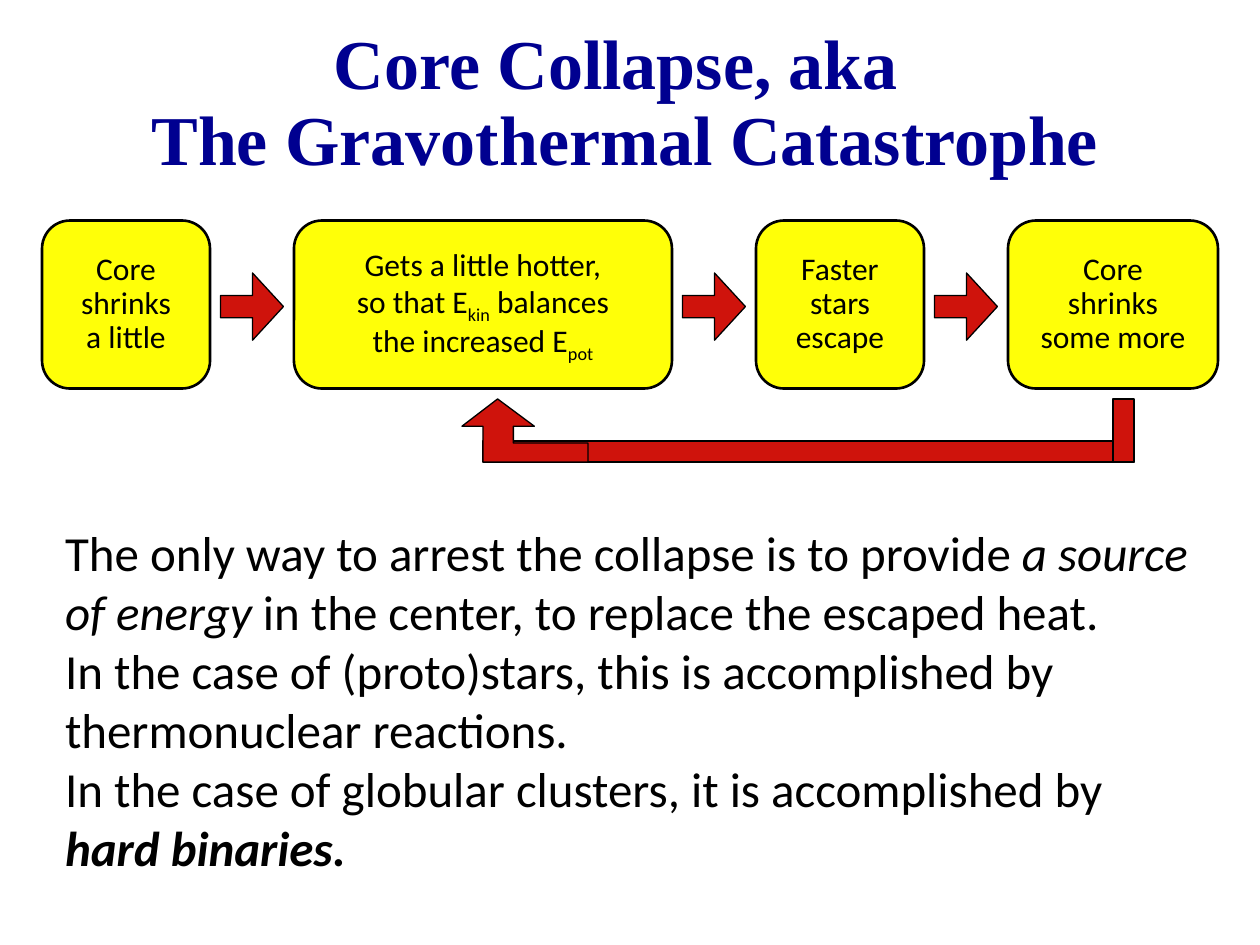
from dataclasses import dataclass
from lxml.etree import SubElement
from pptx import Presentation
from pptx.dml.color import RGBColor
from pptx.enum.shapes import MSO_SHAPE as Preset
from pptx.enum.text import MSO_ANCHOR as Anchor, MSO_AUTO_SIZE as AutoSize, PP_ALIGN as Align
from pptx.oxml.ns import qn
from pptx.slide import Slide
from pptx.util import Inches, Pt

UNITS_PER_INCH = 12
ITALIC = {"italic": True}
BOLD_ITALIC = {"bold": True, "italic": True}
SUBSCRIPT = {"baseline": "-25000"}


def color(value):
    return RGBColor.from_string(value)


def grid(*units):
    return [Inches(unit / UNITS_PER_INCH) for unit in units]


def set_values(target, values):
    for name, value in values.items():
        setattr(target, name, value)


@dataclass
class CollapseSlide:
    slide: Slide
    title_font: str = "Times New Roman"
    text_font: str = "Calibri"
    navy: str = "000090"
    black: str = "000000"
    yellow: str = "FFFF08"
    red: str = "CF130C"

    def place(self, shape, area):
        set_values(shape, dict(zip(("left", "top", "width", "height"), grid(*area))))

    def style_run(self, run, size, font, ink, extra):
        values = {"size": Pt(size), "name": font, **extra}
        baseline = values.pop("baseline", None)
        set_values(run.font, values)
        run.font.color.rgb = color(ink)
        if baseline:
            run._r.get_or_add_rPr().set("baseline", baseline)

    def fill_text(self, frame, lines, size, plain=False, **layout):
        for index, line in enumerate(lines):
            paragraph = frame.paragraphs[0] if index == 0 else frame.add_paragraph()
            if plain:
                properties = paragraph._p.get_or_add_pPr()
                properties.set("marL", "0")
                properties.set("indent", "0")
                SubElement(properties, qn("a:buNone"))
            set_values(paragraph, {"space_before": Pt(0), **layout})
            for part in [line] if isinstance(line, str) else line:
                text, extra = (part, {}) if isinstance(part, str) else part
                run = paragraph.add_run()
                run.text = text
                self.style_run(run, size, self.text_font, self.black, extra)

    def title(self, text, area):
        shape = self.slide.shapes.title
        self.place(shape, area)
        frame = shape.text_frame
        set_values(frame, {"auto_size": AutoSize.NONE, "vertical_anchor": Anchor.MIDDLE})
        paragraph = frame.paragraphs[0]
        paragraph.text = text
        set_values(paragraph, {"alignment": Align.CENTER, "line_spacing": 0.9})
        for run in paragraph.runs:
            self.style_run(run, 40, self.title_font, self.navy, {"bold": True})

    def body(self, lines, area):
        shape = self.slide.placeholders[1]
        self.place(shape, area)
        set_values(shape.text_frame, {"auto_size": AutoSize.NONE, "word_wrap": True,
                                      "vertical_anchor": Anchor.TOP})
        self.fill_text(shape.text_frame, lines, 28, plain=True,
                       alignment=Align.LEFT, line_spacing=1.0)

    def paint(self, shape, fill, width):
        shape.shadow.inherit = False
        shape.fill.solid()
        shape.fill.fore_color.rgb = color(fill)
        shape.line.color.rgb = color(self.black)
        shape.line.width = Pt(width)

    def stage(self, lines, area):
        shape = self.slide.shapes.add_shape(Preset.FLOWCHART_ALTERNATE_PROCESS, *grid(*area))
        self.paint(shape, self.yellow, 1.5)
        set_values(shape.text_frame, {"word_wrap": False, "vertical_anchor": Anchor.MIDDLE})
        self.fill_text(shape.text_frame, lines, 18, alignment=Align.CENTER, line_spacing=0.9)

    def arrow(self, area):
        shape = self.slide.shapes.add_shape(Preset.RIGHT_ARROW, *grid(*area))
        shape.adjustments[0] = 0.33
        shape.adjustments[1] = 0.49
        self.paint(shape, self.red, 0.75)

    def bar(self, area):
        self.paint(self.slide.shapes.add_shape(Preset.RECTANGLE, *grid(*area)), self.red, 0.75)

    def outline(self, points):
        start, *rest = [grid(*point) for point in points]
        builder = self.slide.shapes.build_freeform(*start)
        builder.add_line_segments(rest, close=True)
        self.paint(builder.convert_to_shape(), self.red, 0.75)


def main():
    presentation = Presentation()
    presentation.slide_width, presentation.slide_height = Inches(10), Inches(7.5)
    page = CollapseSlide(presentation.slides.add_slide(presentation.slide_layouts[1]))

    page.title("Core Collapse, aka \vThe Gravothermal Catastrophe", (2, 2, 115, 16))

    stages = [
        (4, 16, ["Core", "shrinks", "a little"]),
        (28, 36, ["Gets a little hotter,",
                  ["so that E", ("kin", SUBSCRIPT), " balances"],
                  ["the increased E", ("pot", SUBSCRIPT)]]),
        (72, 16, ["Faster", "stars", "escape"]),
        (96, 20, ["Core", "shrinks", "some more"]),
    ]
    for column, width, lines in stages:
        page.stage(lines, (column, 21, width, 16))
    for column, width, _ in stages[:-1]:
        page.arrow((column + width + 1, 26, 6, 6.4))

    page.bar((46, 42, 62, 2))
    page.bar((106, 38, 2, 6))
    page.outline([(47.4, 38), (50.9, 40.6), (48.9, 40.6), (48.9, 42.2), (56, 42.2),
                  (56, 44), (46, 44), (46, 40.6), (44, 40.6)])

    page.body([
        ["The only way to arrest the collapse is to provide ", ("a source of energy", ITALIC),
         " in the center, to replace the escaped heat."],
        "In the case of (proto)stars, this is accomplished by thermonuclear reactions.",
        ["In the case of globular clusters, it is accomplished by ",
         ("hard binaries.", BOLD_ITALIC)],
    ], (5, 49.2, 110, 34.8))

    presentation.save("out.pptx")


if __name__ == "__main__":
    main()
